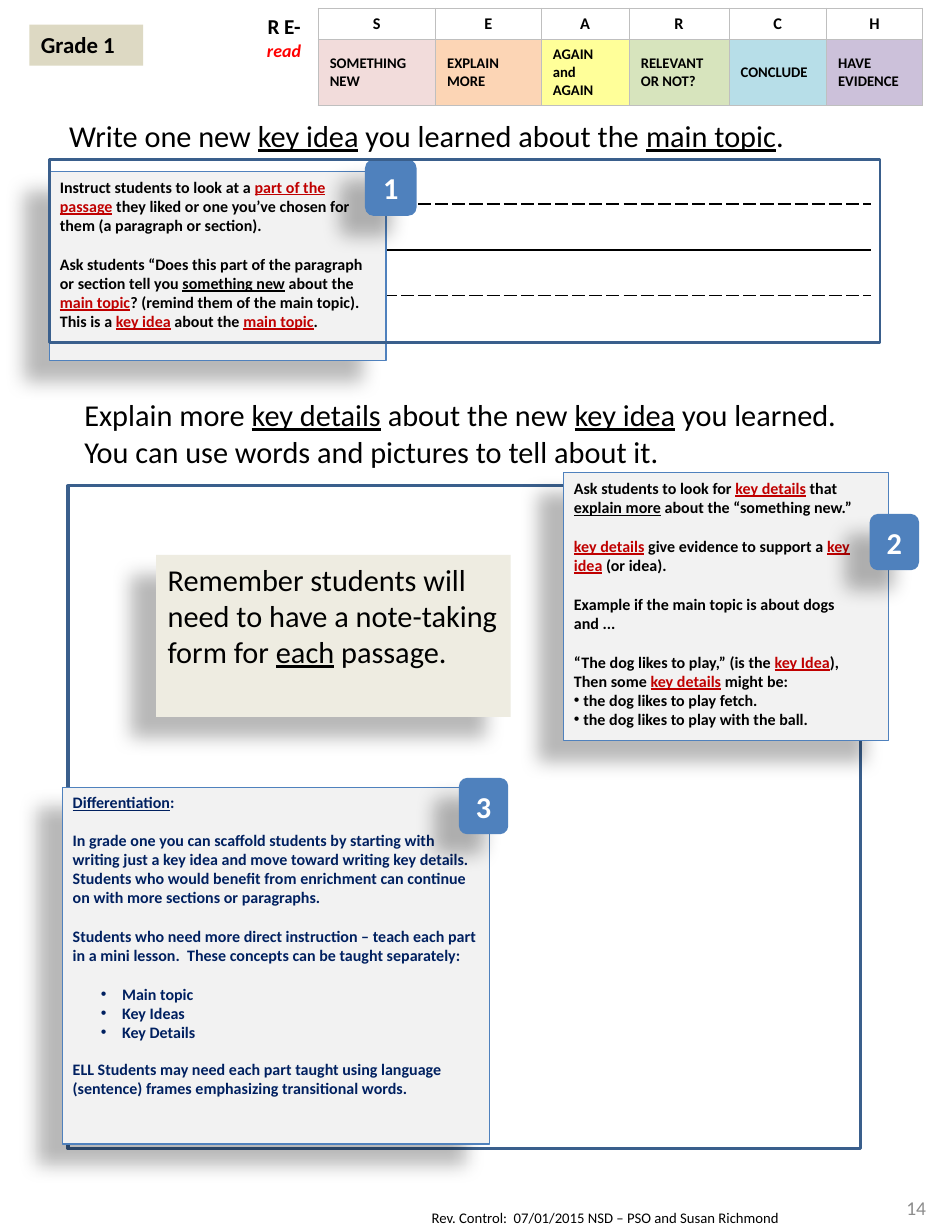
from lxml import etree
from pptx import Presentation, util as u
from pptx.dml.color import RGBColor
from pptx.enum import shapes, text
from pptx.oxml.ns import qn

PX = 9144
theme = dict(
    font="Calibri", ink="000000", key="C00000", navy="002060", red="FF0000", white="FFFFFF",
    grey="8C8C8C", panel="F2F2F2", blue="4F81BD", frame="3A5F8C", tan="DDD9C3", cream="EEECE1",
    grid="BFBFBF", steps=["F2DCDB", "FCD5B5", "FFFF99", "D7E4BD", "B7DEE8", "CCC1DA"],
    heading=18.6, grade=14, reread=13, number=12, read=11, letter=10, note=9.8, small=9,
    gap=12, small_gap=11,
)
MIDDLE = text.MSO_ANCHOR.MIDDLE
CENTER, RIGHT = text.PP_ALIGN.CENTER, text.PP_ALIGN.RIGHT


def write(frame, lines, size, color="ink", bold=False, align=None):
    for i, line in enumerate(lines):
        words, gap, hang, left = (line + (0, 0, 0))[:4] if isinstance(line, tuple) else (line, 0, 0, 0)
        para = frame.paragraphs[0] if i == 0 else frame.add_paragraph()
        para.alignment = align
        para.space_before = u.Pt(gap)
        if hang:
            props = para._p.get_or_add_pPr()
            props.set("marL", str((left + hang) * PX))
            props.set("indent", str(-hang * PX))
            etree.SubElement(props, qn("a:buFont")).set("typeface", "Arial")
            etree.SubElement(props, qn("a:buChar")).set("char", "•")
        for part in words.split("|"):
            run = para.add_run()
            run.text = part.lstrip("_*")
            tint = "key" if part.startswith("*") else color
            style = dict(name=theme["font"], size=u.Pt(theme[size]), bold=bold,
                         underline=part.startswith(("_", "*")))
            for key, value in style.items():
                setattr(run.font, key, value)
            run.font.color.rgb = RGBColor.from_string(theme[tint])


def dress(cell, fill, edges):
    props = cell._tc.get_or_add_tcPr()
    for side in "LRTB":
        color, width, dash = edges.get(side, (None, 0, None))
        edge = etree.SubElement(props, qn(f"a:ln{side}"), w=str(int(width * 12700)))
        if color is None:
            etree.SubElement(edge, qn("a:noFill"))
            continue
        paint = etree.SubElement(edge, qn("a:solidFill"))
        etree.SubElement(paint, qn("a:srgbClr"), val=theme[color])
        etree.SubElement(edge, qn("a:prstDash"), val=dash)
    cell.fill.solid()
    cell.fill.fore_color.rgb = RGBColor.from_string(fill)


deck = Presentation()
deck.slide_width, deck.slide_height = 800 * PX, 1050 * PX
slide = deck.slides.add_slide(deck.slide_layouts[6])
plain = dict(first_row=False, horz_banding=False)

writing_lines = slide.shapes.add_table(4, 1, 50 * PX, 135 * PX, 692 * PX, 156 * PX).table
search = slide.shapes.add_table(2, 7, 213 * PX, 7 * PX, 573 * PX, 81 * PX).table
for grid in (writing_lines, search):
    for key, value in plain.items():
        setattr(grid, key, value)

solid, dashed = ("ink", 1, "solid"), ("ink", 1, "sysDash")
for i in range(4):
    writing_lines.rows[i].height = 39 * PX
    cell = writing_lines.cell(i, 0)
    cell.margin_top = cell.margin_bottom = 0
    top, bottom = (dashed, solid) if i % 2 else (solid, dashed)
    dress(cell, theme["white"], dict(T=top, B=bottom))

for i, width in enumerate([58, 100, 90, 75, 85, 83, 82]):
    search.columns[i].width = width * PX
for i, height in enumerate([26, 55]):
    search.rows[i].height = height * PX
hair = ("grid", 0.5, "solid")
box = dict.fromkeys("LRTB", hair)
reread = search.cell(0, 0)
reread.merge(search.cell(1, 0))
write(reread.text_frame, ["R E-"], "reread", bold=True, align=CENTER)
read = reread.text_frame.add_paragraph()
read.alignment = CENTER
word = read.add_run()
word.text = "read"
style = dict(name=theme["font"], size=u.Pt(theme["read"]), bold=True, italic=True)
for key, value in style.items():
    setattr(word.font, key, value)
word.font.color.rgb = RGBColor.from_string(theme["red"])
for i in range(2):
    dress(search.cell(i, 0), theme["white"], dict(R=hair))
steps = ["SOMETHING NEW", "EXPLAIN MORE", "AGAIN and AGAIN", "RELEVANT OR NOT?", "CONCLUDE", "HAVE EVIDENCE"]
for i, (letter, step, tint) in enumerate(zip("SEARCH", steps, theme["steps"]), 1):
    for row, words, size, fill, align in ((0, letter, "letter", theme["white"], CENTER),
                                          (1, step, "small", tint, None)):
        cell = search.cell(row, i)
        cell.vertical_anchor = MIDDLE
        write(cell.text_frame, [words], size, bold=True, align=align)
        dress(cell, fill, box)

gap, small_gap = theme["gap"], theme["small_gap"]
instruct = [
    "Instruct students to look at a |*part of the passage| they liked or one you’ve chosen for them (a paragraph or section).",
    ("Ask students “Does this part of the paragraph or section tell you |_something new| about the |*main topic"
     "|? (remind them of the main topic). This is a |*key idea| about the |*main topic|.", gap),
]
evidence = [
    "Ask students to look for |*key details| that |_explain more| about the “something new.”",
    ("*key details| give evidence to support a |*key idea| (or idea).", gap),
    ("Example if the main topic is about dogs and ...", gap),
    ("“The dog likes to play,” (is the |*key Idea|),", gap),
    "Then some |*key details| might be:",
    ("the dog likes to play fetch.", 0, 8),
    ("the dog likes to play with the ball.", 0, 8),
]
differentiation = [
    "_Differentiation|:",
    ("In grade one you can scaffold students by starting with writing just a key idea and move toward writing "
     "key details.  Students who would benefit from enrichment can continue on with more sections or paragraphs.",
     small_gap),
    ("Students who need more direct instruction – teach each part in a mini lesson.  "
     "These concepts can be taught separately:", gap),
    ("Main topic", gap, 18, 24),
    ("Key Ideas", 0, 18, 24),
    ("Key Details", 0, 18, 24),
    ("ELL Students may need each part taught using language (sentence) frames emphasizing transitional words.",
     small_gap),
]
heading = dict(size="heading")
note = dict(size="note", bold=True)
badge = dict(size="heading", color="white", bold=True, align=CENTER)
RECT, ROUND = shapes.MSO_SHAPE.RECTANGLE, shapes.MSO_SHAPE.ROUNDED_RECTANGLE
parts = [
    (RECT, (358, 1025, 400, 25), None, None, 0, 10, ["Rev. Control:  07/01/2015 NSD – PSO and Susan Richmond"], dict(size="small")),
    (RECT, (713, 1008, 87, 42), None, None, 0, 11, ["14"], dict(size="number", color="grey", align=RIGHT)),
    (RECT, (50, 95, 700, 40), None, None, 0, 9,
     ["Write one new |_key idea| you learned about the |_main topic|."], heading),
    (RECT, (58, 414, 675, 565), None, "frame", 2, 9, [], heading),
    (RECT, (42, 146, 287, 161), "panel", "blue", 0.75, 9, instruct, note),
    (RECT, (480, 403, 277, 228), "panel", "blue", 0.75, 9, evidence, note),
    (ROUND, (311, 136, 44, 48), "blue", None, 0, 9, ["1"], badge),
    (ROUND, (741, 438, 42, 48), "blue", None, 0, 9, ["2"], badge),
    (RECT, (25, 21, 97, 35), "tan", None, 0, 10, ["Grade 1"], dict(size="grade", bold=True)),
    (RECT, (62, 333, 700, 74), None, None, 0, 10,
     ["Explain more |_key details| about the new |_key idea| you learned.  You can use words and pictures to tell about it."], heading),
    (RECT, (53, 671, 364, 304), "panel", "blue", 0.75, 9, differentiation, dict(note, color="navy")),
    (ROUND, (391, 663, 42, 48), "blue", None, 0, 9, ["3"], badge),
    (RECT, (133, 473, 302, 138), "cream", None, 0, 10,
     ["Remember students will need to have a note-taking form for |_each| passage."], heading),
    (RECT, (42, 136, 708, 156), None, "frame", 1.5, 9, [], heading),
]
for kind, place, fill, line, weight, inset, lines, look in parts:
    place = [n * PX for n in place]
    if fill or line:
        part = slide.shapes.add_shape(kind, *place)
        part.shadow.inherit = False
        for paint, color in ((part.fill, fill), (part.line.fill, line)):
            if color:
                paint.solid()
                paint.fore_color.rgb = RGBColor.from_string(theme[color])
            else:
                paint.background()
        if line:
            part.line.width = u.Pt(weight)
    else:
        part = slide.shapes.add_textbox(*place)
    if fill in ("panel", "blue", "cream"):
        effects = part._element.spPr.find(qn("a:effectLst"))
        shade = etree.SubElement(effects, qn("a:outerShdw"), blurRad="150000", dist="250000",
                                 dir="8460000", algn="tr", rotWithShape="0")
        black = etree.SubElement(shade, qn("a:srgbClr"), val=theme["ink"])
        etree.SubElement(black, qn("a:alpha"), val="28000")
    middle = kind == ROUND or look["size"] == "number"
    layout = dict(word_wrap=True, margin_left=inset * PX, margin_right=inset * PX, margin_top=5 * PX,
                  margin_bottom=5 * PX, vertical_anchor=MIDDLE if middle else text.MSO_ANCHOR.TOP)
    for key, value in layout.items():
        setattr(part.text_frame, key, value)
    write(part.text_frame, lines, **{"align": text.PP_ALIGN.LEFT, **look})

deck.save("out.pptx")
